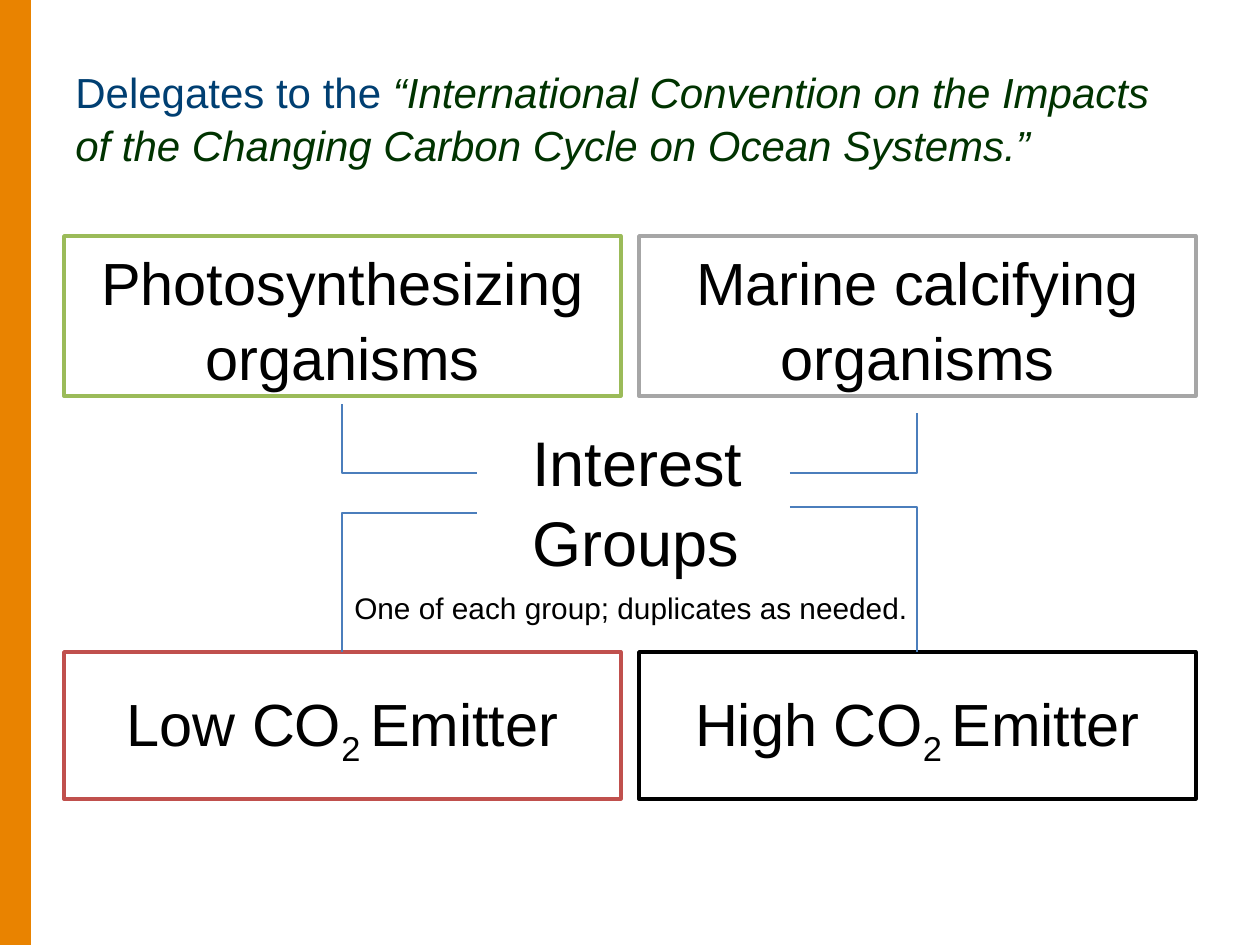
import pptx
import pptx.util
import pptx.dml.color
import pptx.enum.shapes
import pptx.enum.text

PX = 914400 // 126  # EMU in one px
COLORS = {
    "bar": "E98300", "title": "003F72", "quote": "003300", "text": "000000",
    "box": "FFFFFF", "elbow": "4B7EBC", "plants": "9BBB59",
    "calcifiers": "A6A6A6", "low": "C0504D", "high": "000000",
}
ALIGN = pptx.enum.text.PP_ALIGN
ANCHOR = pptx.enum.text.MSO_ANCHOR
RECTANGLE = pptx.enum.shapes.MSO_SHAPE.RECTANGLE


def color(name):
    return pptx.dml.color.RGBColor.from_string(COLORS[name])


def emu(*lengths):
    return [length * PX for length in lengths]


def write(shape, pieces, size, align=ALIGN.LEFT, anchor=ANCHOR.TOP):
    """Fill a shape with one paragraph and return its runs."""
    frame = shape.text_frame
    frame.word_wrap = True
    frame.vertical_anchor = anchor
    para = frame.paragraphs[0]
    para.alignment = align
    para.line_spacing = 1.05
    para.font.name = "Arial"
    para.font.size = pptx.util.Pt(size)
    para.font.color.rgb = color("text")
    spans = []
    for piece in pieces:
        span = para.add_run()
        span.text = piece
        spans.append(span)
    return spans


def add_rectangle(page, box, fill, line=None):
    shape = page.shapes.add_shape(RECTANGLE, *emu(*box))
    shape.shadow.inherit = False
    shape.fill.solid()
    shape.fill.fore_color.rgb = color(fill)
    if line:
        shape.line.color.rgb = color(line)
        shape.line.width = pptx.util.Pt(2)
    else:
        shape.line.fill.background()
    return shape


def add_title(page, box):
    shape = page.shapes.add_textbox(*emu(*box))
    lead, quote = write(shape, [
        "Delegates to the ",
        "“International Convention on the Impacts of the Changing "
        "Carbon Cycle on Ocean Systems.”"], 24, anchor=ANCHOR.MIDDLE)
    lead.font.color.rgb = color("title")
    quote.font.color.rgb = color("quote")
    quote.font.italic = True


def add_group_box(page, box, pieces, line, anchor):
    shape = add_rectangle(page, box, "box", line)
    spans = write(shape, pieces, 34, ALIGN.CENTER, anchor)
    if len(spans) == 3:  # the middle piece is a subscript
        spans[1].font._element.set("baseline", "-25000")


def add_elbow(page, start, end):
    """Draw a line that leaves start sideways and reaches end vertically."""
    builder = page.shapes.build_freeform(*start, scale=PX)
    builder.add_line_segments([(end[0], start[1]), end], close=False)
    elbow = builder.convert_to_shape()
    elbow.shadow.inherit = False
    elbow.fill.background()
    elbow.line.color.rgb = color("elbow")
    elbow.line.width = pptx.util.Pt(0.75)


def add_diagram(page, box):
    left, top, width, height = box
    gap, upper, lower = 18, 160, 147
    half = (width - gap) // 2
    right = left + half + gap
    bottom = top + height - lower

    # Four interest groups
    for x, pieces, line in ((left, ["Low CO", "2 ", "Emitter"], "low"),
                            (right, ["High CO", "2 ", "Emitter"], "high")):
        add_group_box(page, (x, bottom, half, lower), pieces, line, ANCHOR.MIDDLE)
    for x, label, line in ((left, "Photosynthesizing organisms", "plants"),
                           (right, "Marine calcifying organisms", "calcifiers")):
        add_group_box(page, (x, top, half, upper), [label], line, ANCHOR.TOP)

    # Central label and its note
    label = page.shapes.add_textbox(*emu(left + 456, top + 178, 248, 69))
    write(label, ["Interest Groups"], 36)
    note = page.shapes.add_textbox(*emu(left + 271, top + 344, 601, 107))
    spans = write(note, ["One of each group; duplicates as needed.", " "], 17, ALIGN.CENTER)
    spans[1].font.size = pptx.util.Pt(18)

    # Elbow lines from the label to the groups
    left_edge, right_edge = left + 413, left + 726
    left_middle, right_middle = left + half // 2, right + half // 2
    add_elbow(page, (left_edge, top + 237), (left_middle, top + 168))
    add_elbow(page, (right_edge, top + 237), (right_middle, top + 177))
    add_elbow(page, (right_edge, top + 271), (right_middle, bottom))
    add_elbow(page, (left_edge, top + 277), (left_middle, bottom))


def main():
    deck = pptx.Presentation()
    deck.slide_width, deck.slide_height = pptx.util.Inches(10), pptx.util.Inches(7.5)
    page = deck.slides.add_slide(deck.slide_layouts[6])
    add_rectangle(page, (0, 0, 31, 945), "bar")
    add_title(page, (63, 38, 1134, 157))
    add_diagram(page, (64, 236, 1132, 563))
    deck.save("out.pptx")


if __name__ == "__main__":
    main()
